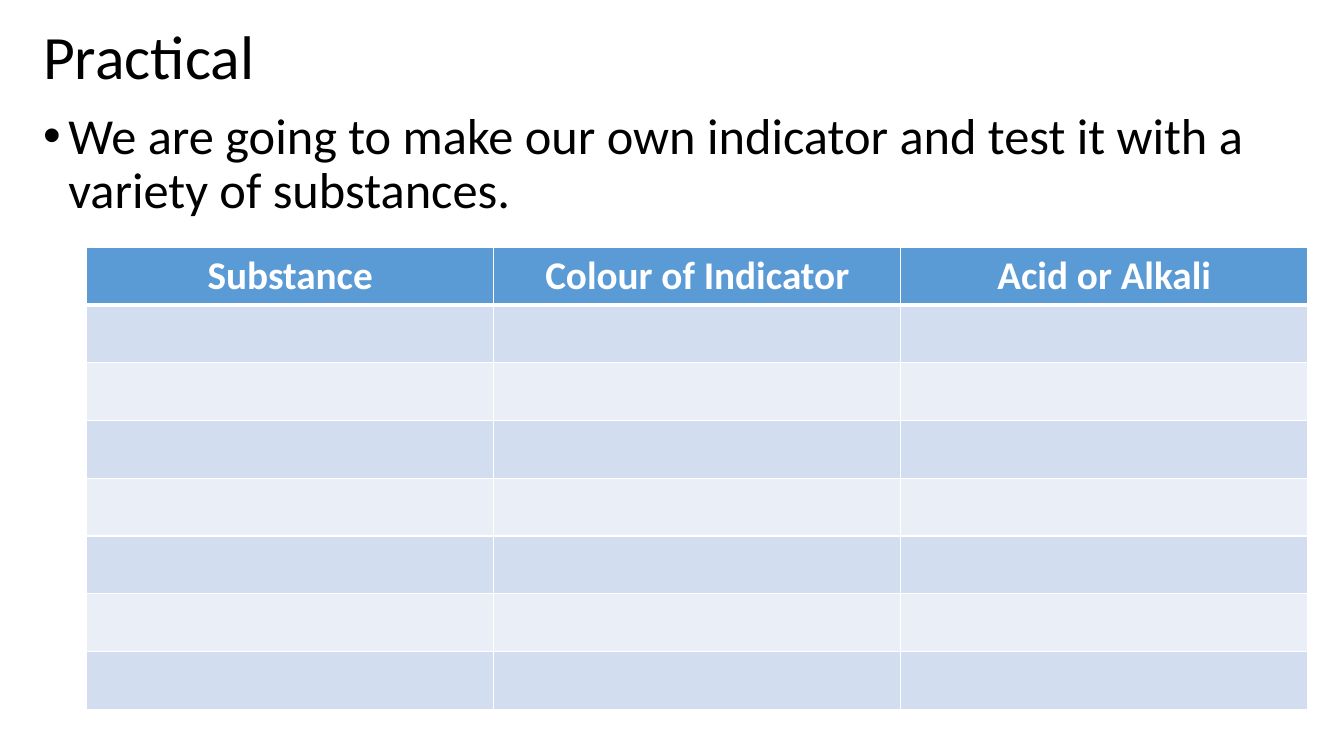
from lxml import etree
from pptx import Presentation
from pptx.dml.color import RGBColor
from pptx.enum import text
from pptx.oxml import ns
from pptx.util import Inches, Pt

BLACK = RGBColor(0x00, 0x00, 0x00)
WHITE = RGBColor(0xFF, 0xFF, 0xFF)
HEADER_BLUE = RGBColor(0x5B, 0x9B, 0xD5)
BANDS = [RGBColor(0xEA, 0xEF, 0xF7), RGBColor(0xD2, 0xDE, 0xEF)]

HEADERS = ["Substance", "Colour of Indicator", "Acid or Alkali"]
ROWS = 8


def add_run(p, words, size, color, bold=False):
    r = p.add_run()
    r.text = words
    r.font.name = "Calibri"
    r.font.size = Pt(size)
    r.font.color.rgb = color
    r.font.bold = bold


def add_text(left, top, width, height, words, size, anchor):
    """Add a wrapped one-paragraph text box and return its paragraph."""
    tf = slide.shapes.add_textbox(
        Inches(left), Inches(top), Inches(width), Inches(height)).text_frame
    tf.word_wrap = True
    tf.vertical_anchor = anchor
    p = tf.paragraphs[0]
    p.line_spacing = 0.9
    add_run(p, words, size, BLACK)
    return p


prs = Presentation()
prs.slide_width = Inches(13.33)
prs.slide_height = Inches(7.5)
slide = prs.slides.add_slide(prs.slide_layouts[6])

add_text(0.33, -0.13, 11.5, 1.45, "Practical", 44, text.MSO_ANCHOR.MIDDLE)

# Bulleted instruction
p = add_text(
    0.33, 1.05, 12.74, 1.23,
    "We are going to make our own indicator and test it with a variety of substances.",
    36, text.MSO_ANCHOR.TOP)
p.space_before = Pt(10)
pPr = p._p.get_or_add_pPr()
pPr.set("marL", str(Inches(0.25)))
pPr.set("indent", str(-Inches(0.25)))
etree.SubElement(pPr, ns.qn("a:buFont"), typeface="Arial")
etree.SubElement(pPr, ns.qn("a:buChar"), char="•")

# Results table: a header row and empty banded rows
table = slide.shapes.add_table(
    ROWS, len(HEADERS), Inches(0.86), Inches(2.45), Inches(12.11), Inches(4.59)).table
for row in range(ROWS):
    for col, header in enumerate(HEADERS):
        cell = table.cell(row, col)
        tcPr = cell._tc.get_or_add_tcPr()
        for side in "LRTB":
            thick = (row, side) in [(0, "B"), (1, "T")]
            ln = etree.SubElement(tcPr, ns.qn(f"a:ln{side}"), w=str(Pt(3 if thick else 1)))
            line_fill = etree.SubElement(ln, ns.qn("a:solidFill"))
            etree.SubElement(line_fill, ns.qn("a:srgbClr"), val=str(WHITE))
        cell.fill.solid()
        cell.fill.fore_color.rgb = BANDS[row % 2] if row else HEADER_BLUE
        if row == 0:
            p = cell.text_frame.paragraphs[0]
            p.alignment = text.PP_ALIGN.CENTER
            add_run(p, header, 28, WHITE, bold=True)

prs.save("out.pptx")
